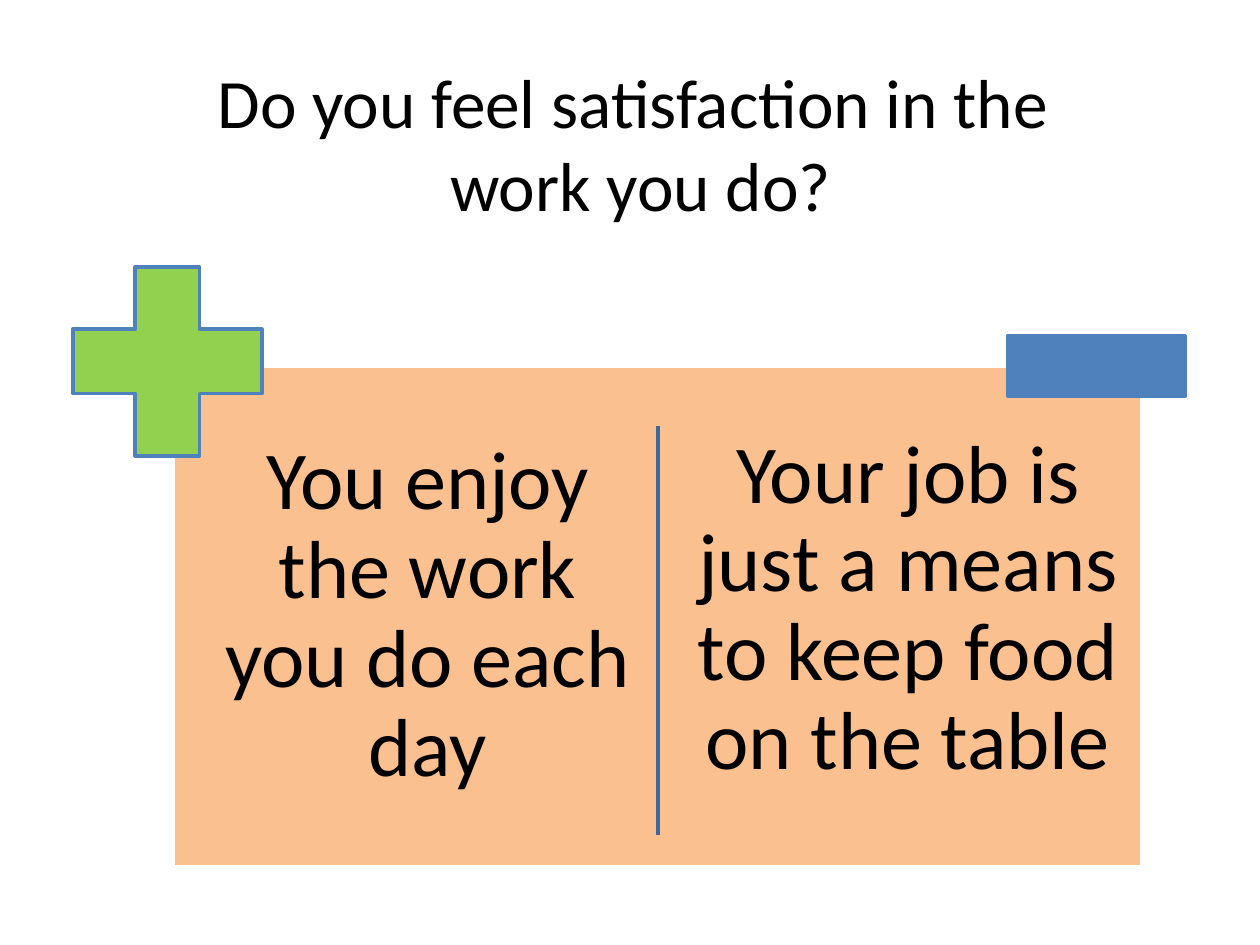
from lxml import etree
from pptx import Presentation
from pptx.dml.color import RGBColor
from pptx.enum.shapes import MSO_CONNECTOR, MSO_SHAPE
from pptx.enum.text import MSO_ANCHOR, MSO_AUTO_SIZE, PP_ALIGN
from pptx.oxml.ns import qn
from pptx.util import Cm, Pt

RECT, PLUS = MSO_SHAPE.RECTANGLE, MSO_SHAPE.CROSS
STRAIGHT = MSO_CONNECTOR.STRAIGHT
TOP, MIDDLE = MSO_ANCHOR.TOP, MSO_ANCHOR.MIDDLE
NO_FIT = MSO_AUTO_SIZE.NONE
CENTER = PP_ALIGN.CENTER

FONT = "Calibri"
COLORS = {
    "text": "000000",
    "panel": "FAC090",
    "white": "FFFFFF",
    "green": "92D050",
    "blue": "4F81BD",
    "divider": "3F6797",
}


def rgb(name):
    return RGBColor.from_string(COLORS[name])


def set_text(tf, text, size, anchor):
    tf.text = text
    tf.word_wrap = True
    tf.auto_size = NO_FIT
    tf.vertical_anchor = anchor
    for p in tf.paragraphs:
        p.alignment = CENTER
        for r in p.runs:
            r.font.name = FONT
            r.font.size = Pt(size)
            r.font.color.rgb = rgb("text")


prs = Presentation()
prs.slide_width, prs.slide_height = Cm(25.4), Cm(19.05)
slide = prs.slides.add_slide(prs.slide_layouts[5])

# Title
title = slide.shapes.title
title.left, title.top = Cm(0.43), Cm(1.27)
title.width, title.height = Cm(24.97), Cm(3.18)
set_text(title.text_frame, "Do you feel satisfaction in the \vwork you do?", 39.6, MIDDLE)

# Panel with the plus and minus signs
group = slide.shapes.add_group_shape()
blocks = [
    (RECT, 3.5, 7.39, 19.51, 10.08, "panel", "white"),
    (PLUS, 1.47, 5.38, 3.81, 3.81, "green", "blue"),
    (RECT, 20.32, 6.76, 3.58, 1.22, "blue", "blue"),
]
for kind, x, y, w, h, fill, line in blocks:
    sp = group.shapes.add_shape(kind, Cm(x), Cm(y), Cm(w), Cm(h))
    sp.shadow.inherit = False
    sp.fill.solid()
    sp.fill.fore_color.rgb = rgb(fill)
    sp.line.color.rgb = rgb(line)
    sp.line.width = Pt(2)
    if kind == PLUS:
        sp.adjustments[0] = 0.33

# Pro and con texts
columns = [
    (4.09, 8.59, "You enjoy the work you do each day"),
    (13.77, 8.46, "Your job is just a means to keep food on the table"),
]
for x, y, text in columns:
    sp = group.shapes.add_textbox(Cm(x), Cm(y), Cm(9.07), Cm(8.64))
    tf = sp.text_frame
    set_text(tf, text, 47, TOP)
    tf.paragraphs[0].line_spacing = 0.9
    tf.margin_left = tf.margin_right = tf.margin_top = tf.margin_bottom = Cm(0.25)

# Divider between the columns
divider = group.shapes.add_connector(STRAIGHT, Cm(13.26), Cm(8.59), Cm(13.26), Cm(16.84))
divider.line.color.rgb = rgb("divider")
divider.line.width = Pt(2)
etree.SubElement(divider.line._get_or_add_ln().getparent(), qn("a:effectLst"))

prs.save("out.pptx")
